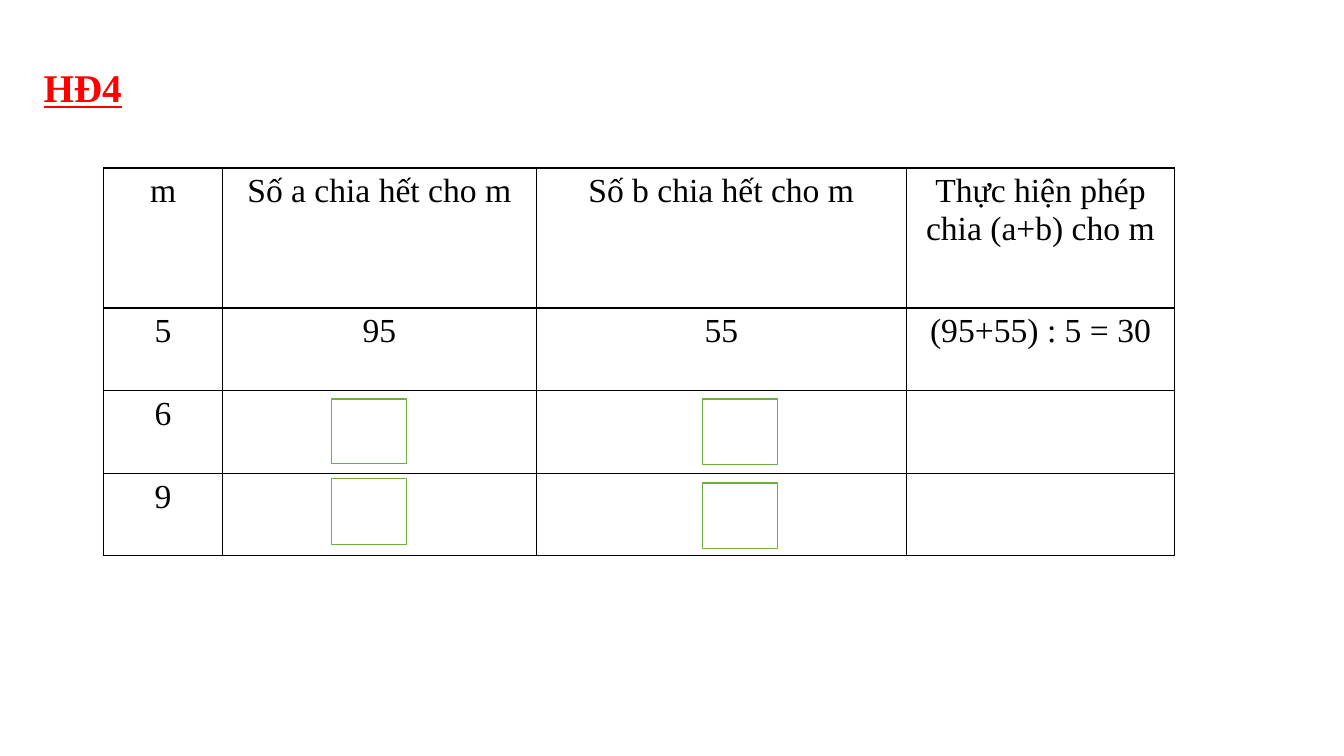
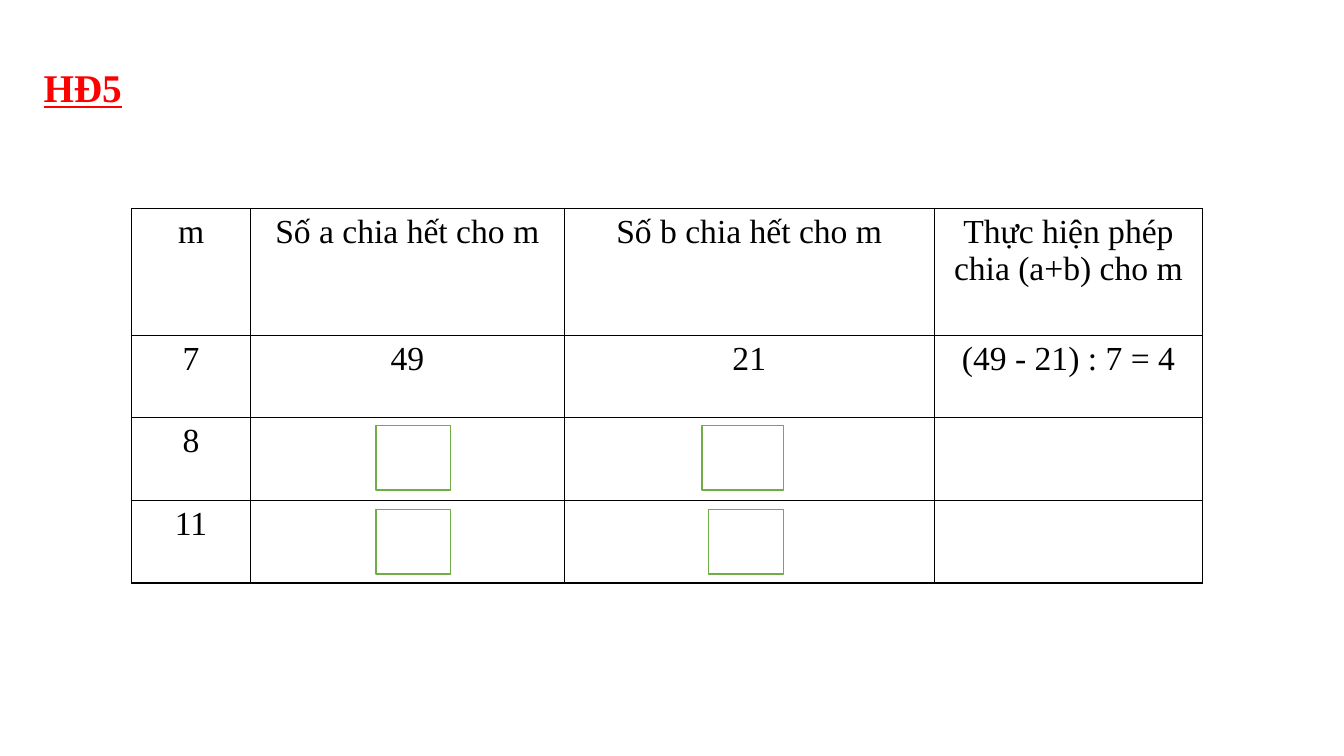
from lxml import etree
from pptx import Presentation
from pptx.dml.color import RGBColor
from pptx.enum.shapes import MSO_SHAPE
from pptx.enum.text import MSO_AUTO_SIZE, PP_ALIGN
from pptx.oxml.ns import qn
from pptx.util import Pt

RECTANGLE = MSO_SHAPE.RECTANGLE
CENTER = PP_ALIGN.CENTER
GROW = MSO_AUTO_SIZE.SHAPE_TO_FIT_TEXT

FONT = "Times New Roman"
BLACK, WHITE, RED, GREEN = "000000", "FFFFFF", "FF0000", "70AD47"
COLUMN_WIDTHS = [85, 224, 264.5, 191.5]
ROW_HEIGHT = 59
HEADINGS = [
    "m",
    "Số a chia hết cho m",
    "Số b chia hết cho m",
    "Thực hiện phép chia (a+b) cho m",
]

ACTIVITIES = [
    {
        "title": "HĐ4",
        "corner": (74, 120),
        "header_height": 100,
        "rows": [["5", "95", "55", "(95+55) : 5 = 30"], ["6"], ["9"]],
        "answers": [
            (237, 285, 53.5, 46),
            (237, 342, 53.5, 47),
            (502, 345, 53.5, 47),
            (502, 285, 53.5, 47),
        ],
    },
    {
        "title": "HĐ5",
        "corner": (94, 149),
        "header_height": 90.5,
        "rows": [["7", "49", "21", "(49 - 21) : 7 = 4"], ["8"], ["11"]],
        "answers": [
            (268.5, 304, 53.5, 46),
            (268.5, 364, 53.5, 46),
            (506, 364, 53.5, 46),
            (501.5, 304, 58, 46),
        ],
    },
]


def rgb(value):
    return RGBColor.from_string(value)


def style_text(paragraph, size, color):
    for run in paragraph.runs:
        run.font.name = FONT
        run.font.size = Pt(size)
        run.font.color.rgb = rgb(color)


prs = Presentation()
prs.slide_width, prs.slide_height = Pt(960), Pt(540)
blank = prs.slide_layouts[6]

for activity in ACTIVITIES:
    slide = prs.slides.add_slide(blank)
    left, top = activity["corner"]
    rows = [HEADINGS] + activity["rows"]
    heights = [activity["header_height"]] + [ROW_HEIGHT] * len(activity["rows"])

    division_table = slide.shapes.add_table(
        len(rows), len(COLUMN_WIDTHS), Pt(left), Pt(top),
        Pt(sum(COLUMN_WIDTHS)), Pt(sum(heights)),
    ).table
    division_table.first_row = False
    division_table.horz_banding = False
    for column, width in zip(division_table.columns, COLUMN_WIDTHS):
        column.width = Pt(width)
    for row, height in zip(division_table.rows, heights):
        row.height = Pt(height)

    for cell in division_table.iter_cells():
        properties = cell._tc.get_or_add_tcPr()
        for side in ("a:lnL", "a:lnR", "a:lnT", "a:lnB"):
            border = etree.SubElement(properties, qn(side), w=str(Pt(1)))
            border_fill = etree.SubElement(border, qn("a:solidFill"))
            etree.SubElement(border_fill, qn("a:srgbClr"), val=BLACK)
        cell.fill.background()

    for row_index, values in enumerate(rows):
        for column_index, value in enumerate(values):
            paragraph = division_table.cell(row_index, column_index).text_frame.paragraphs[0]
            paragraph.text = value
            paragraph.alignment = CENTER
            style_text(paragraph, 24, BLACK)

    for x, y, width, height in activity["answers"]:
        answer = slide.shapes.add_shape(RECTANGLE, Pt(x), Pt(y), Pt(width), Pt(height))
        answer.shadow.inherit = False
        answer.fill.solid()
        answer.fill.fore_color.rgb = rgb(WHITE)
        answer.line.color.rgb = rgb(GREEN)
        answer.line.width = Pt(1)

    title = slide.shapes.add_textbox(Pt(24), Pt(42), Pt(154), Pt(41)).text_frame
    title.word_wrap = True
    title.auto_size = GROW
    title.text = activity["title"]
    style_text(title.paragraphs[0], 28, RED)
    title_font = title.paragraphs[0].runs[0].font
    title_font.bold = True
    title_font.underline = True

prs.save("out.pptx")
